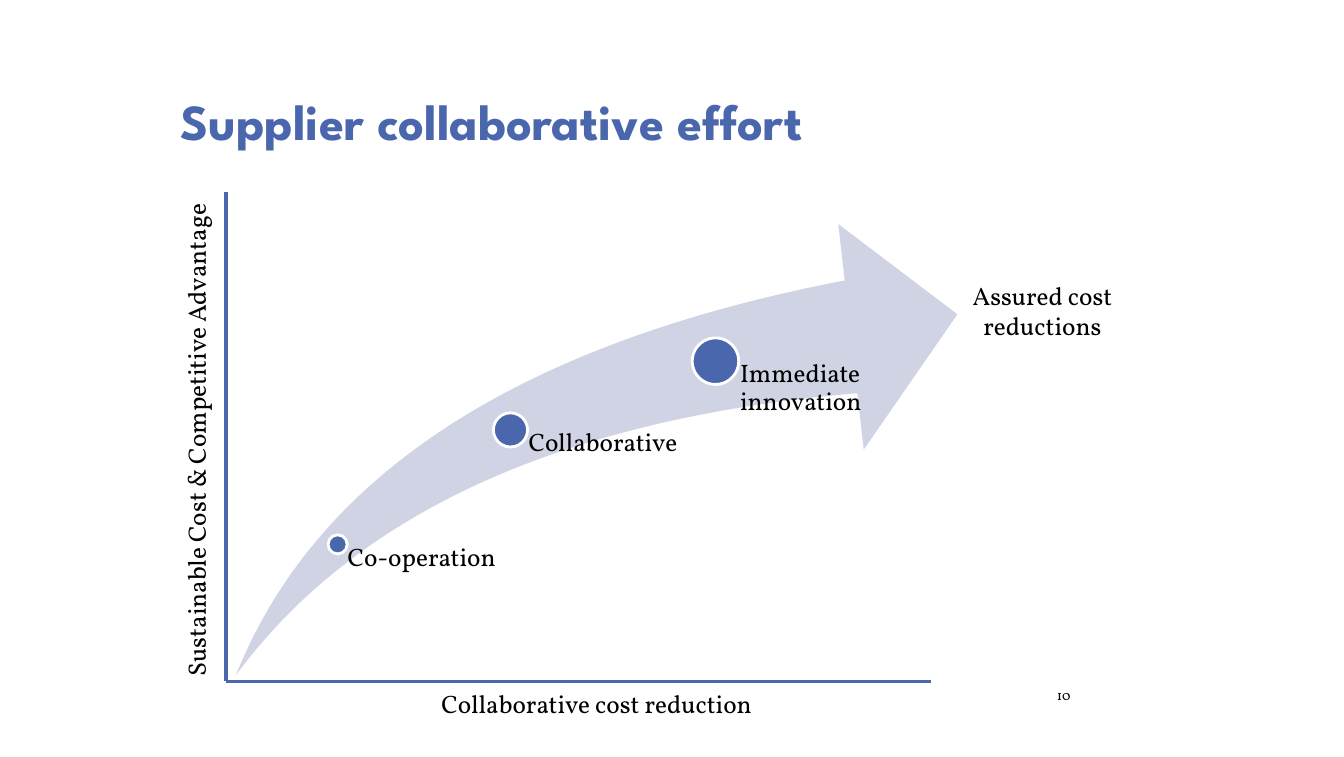
from lxml import etree
from pptx import Presentation
from pptx.dml.color import RGBColor
from pptx.enum.shapes import MSO_CONNECTOR, MSO_SHAPE
from pptx.enum.text import MSO_ANCHOR as ANCHOR, PP_ALIGN as ALIGN
from pptx.oxml.ns import qn
from pptx.util import Cm, Pt

BLUE = RGBColor(0x4A, 0x66, 0xAC)
PALE_BLUE = RGBColor(0xD0, 0xD3, 0xE3)
BLACK = RGBColor(0, 0, 0)
WHITE = RGBColor(0xFF, 0xFF, 0xFF)
HEADING_FONT = "League Spartan"
BODY_FONT = "Vollkorn"


class SlideBuilder:
    """Holds the shared style and the current slide; all lengths are in cm."""

    inset = 0.13

    def __init__(self, slide):
        self.slide = slide

    def text(self, words, left, top, width, height, size=18, font=BODY_FONT,
             color=BLACK, bold=False, align=ALIGN.LEFT, anchor=ANCHOR.TOP,
             spacing=1.0, insets=(inset,) * 4, wrap=True, upward=False):
        box = self.slide.shapes.add_textbox(Cm(left), Cm(top), Cm(width), Cm(height))
        frame = box.text_frame
        frame.text = words
        frame.word_wrap = wrap
        frame.vertical_anchor = anchor
        (frame.margin_left, frame.margin_top,
         frame.margin_right, frame.margin_bottom) = map(Cm, insets)
        if upward:
            box.element.txBody.find(qn("a:bodyPr")).set("vert", "vert270")
        paragraph = frame.paragraphs[0]
        paragraph.alignment = align
        paragraph.line_spacing = spacing
        run_font = paragraph.runs[0].font
        run_font.name, run_font.size, run_font.bold = font, Pt(size), bold
        run_font.color.rgb = color

    def shape(self, kind, left, top, width, height, fill, outline=None):
        shape = self.slide.shapes.add_shape(
            kind, Cm(left), Cm(top), Cm(width), Cm(height))
        shape.shadow.inherit = False
        shape.fill.solid()
        shape.fill.fore_color.rgb = fill
        if outline is None:
            shape.line.fill.background()
        else:
            shape.line.color.rgb = outline
            shape.line.width = Pt(2)
        return shape

    def axis(self, start, end):
        line = self.slide.shapes.add_connector(
            MSO_CONNECTOR.STRAIGHT, *map(Cm, start + end))
        line.line.color.rgb = BLUE
        line.line.width = Pt(2.25)
        etree.SubElement(line.element.spPr, qn("a:effectLst"))

    def milestone(self, words, center_x, center_y, diameter, width, bottom):
        radius = diameter / 2
        self.shape(MSO_SHAPE.OVAL, center_x - radius, center_y - radius,
                   diameter, diameter, BLUE, WHITE)
        # The label starts at the dot's centre, indented past its edge
        self.text(words, center_x, center_y, width, bottom - center_y,
                  spacing=0.9, insets=(diameter * 0.53, 0, 0, 0))


def main():
    presentation = Presentation()
    presentation.slide_width, presentation.slide_height = Cm(33.83), Cm(19.05)
    builder = SlideBuilder(presentation.slides.add_slide(presentation.slide_layouts[6]))

    # Title and slide number
    builder.text("Supplier collaborative effort", 4.42, 0.94, 22.66, 2.97, size=36,
                 font=HEADING_FONT, color=BLUE, bold=True,
                 anchor=ANCHOR.BOTTOM, spacing=0.8)
    builder.text("10", 26.44, 17.17, 0.64, 0.64, size=10, align=ALIGN.RIGHT,
                 anchor=ANCHOR.MIDDLE, wrap=False)

    # Growth arrow
    arrow_left, arrow_top, arrow_width, arrow_height = 5.94, 5.64, 18.16, 11.35
    arrow = builder.shape(MSO_SHAPE.SWOOSH_ARROW, arrow_left, arrow_top,
                          arrow_width, arrow_height, PALE_BLUE)
    arrow.adjustments[0] = arrow.adjustments[1] = 0.25

    # Milestones along the arrow
    for words, center_x, center_y, diameter, width in (
            ("Co-operation", 8.5, 13.7, 0.48, 4.24),
            ("Collaborative", 12.85, 10.82, 0.86, 4.37),
            ("Immediate innovation", 18.01, 9.09, 1.17, 4.37)):
        builder.milestone(words, center_x, center_y, diameter, width,
                          arrow_top + arrow_height)

    # Axes and their captions
    origin = (5.69, 17.15)
    builder.text("Sustainable Cost & Competitive Advantage", 4.42, 4.55, 1.02, 12.6,
                 wrap=False, upward=True)
    builder.text("Collaborative cost reduction", arrow_left, 17.2, arrow_width, 1.02,
                 align=ALIGN.CENTER)
    builder.axis((origin[0], 4.83), origin)
    builder.axis(origin, (23.44, origin[1]))

    # Outcome
    builder.text("Assured cost reductions", 23.7, 6.91, 5.08, 1.8,
                 align=ALIGN.CENTER, anchor=ANCHOR.MIDDLE)

    presentation.save("out.pptx")


if __name__ == "__main__":
    main()
